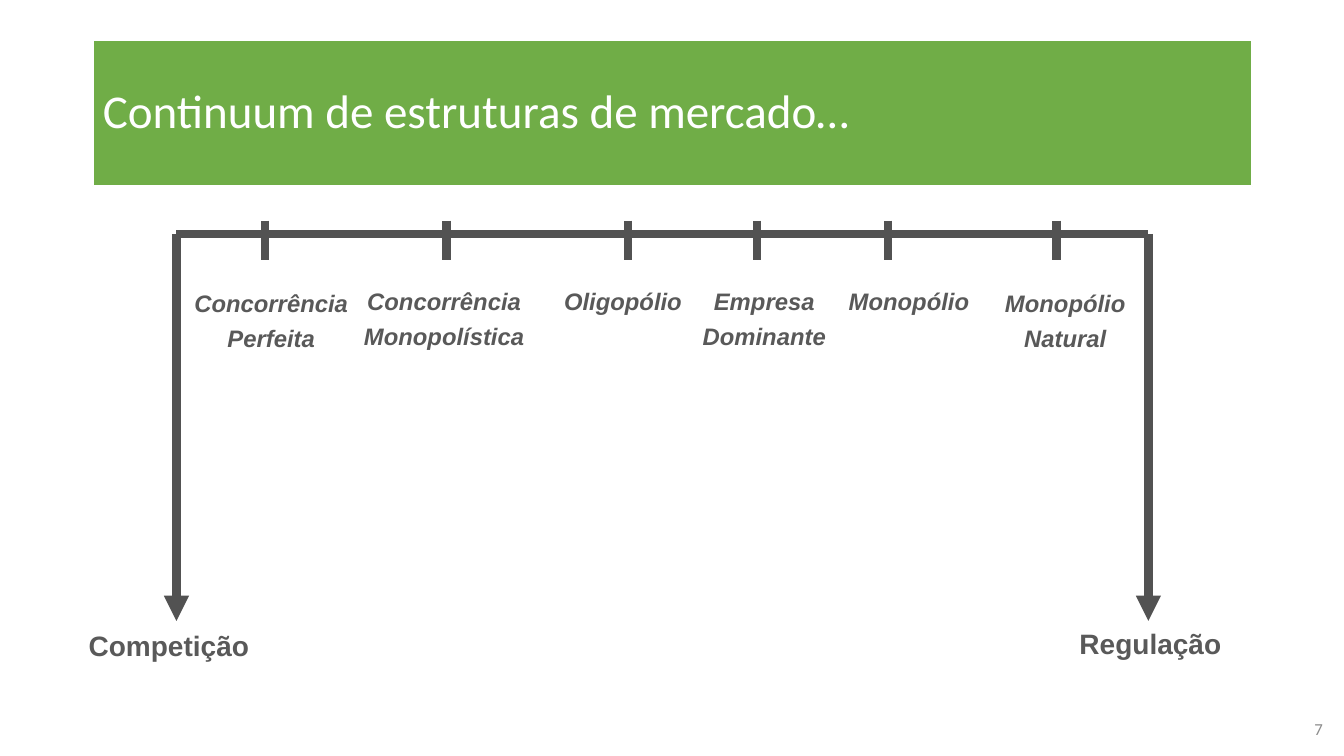
from dataclasses import dataclass

from lxml import etree
from pptx import Presentation
from pptx.dml.color import RGBColor
from pptx.enum.shapes import MSO_CONNECTOR
from pptx.enum.text import MSO_ANCHOR, MSO_AUTO_SIZE, PP_ALIGN
from pptx.oxml.ns import qn
from pptx.util import Inches, Pt

LEFT, CENTER, RIGHT = PP_ALIGN.LEFT, PP_ALIGN.CENTER, PP_ALIGN.RIGHT
TOP, MIDDLE = MSO_ANCHOR.TOP, MSO_ANCHOR.MIDDLE
NO_FIT = MSO_AUTO_SIZE.NONE
STRAIGHT = MSO_CONNECTOR.STRAIGHT


@dataclass(frozen=True)
class Theme:
    green: str = "70AD47"
    white: str = "FFFFFF"
    axis: str = "525252"
    label: str = "595959"
    number: str = "8C8C8C"
    heading_font: str = "Calibri"
    label_font: str = "Arial"
    title_size: float = 33.6
    end_size: float = 20
    label_size: float = 17
    number_size: float = 12
    axis_width: float = 6


THEME = Theme()

# Lines of the label, then tick x, label left, label width and drop,
# all measured from the left end of the axis.
STRUCTURES = [
    (["Concorrência", "Perfeita"], 0.88, 0.02, 1.84, 0.02),
    (["Concorrência", "Monopolística"], 2.68, 1.7, 1.91, 0),
    (["Oligopólio"], 4.48, 3.7, 1.46, 0),
    (["Empresa", "Dominante"], 5.76, 5.07, 1.52, 0),
    (["Monopólio"], 7.06, 6.52, 1.49, 0),
    (["Monopólio", "Natural"], 8.73, 8.07, 1.49, 0.02),
]


def write(sp, lines, *, size, color, font=THEME.label_font, bold=False,
          italic=False, align=LEFT, anchor=TOP, spacing=1.0):
    tf = sp.text_frame
    tf.word_wrap = True
    tf.auto_size = NO_FIT
    tf.vertical_anchor = anchor
    for i, line in enumerate(lines):
        p = tf.add_paragraph() if i else tf.paragraphs[0]
        p.alignment = align
        p.line_spacing = spacing
        p.space_before = Pt(size / 2 if i else 0)
        r = p.add_run()
        r.text = line
        r.font.name = font
        r.font.size = Pt(size)
        r.font.bold = bold
        r.font.italic = italic
        r.font.color.rgb = RGBColor.from_string(color)


def add_text(slide, left, top, width, height, lines, **fmt):
    sp = slide.shapes.add_textbox(
        Inches(left), Inches(top), Inches(width), Inches(height))
    write(sp, lines, **fmt)


def add_line(slide, x1, y1, x2, y2, arrow=False):
    cxn = slide.shapes.add_connector(
        STRAIGHT, Inches(x1), Inches(y1), Inches(x2), Inches(y2))
    cxn.line.width = Pt(THEME.axis_width)
    cxn.line.color.rgb = RGBColor.from_string(THEME.axis)
    if arrow:
        ln = cxn.line._get_or_add_ln()
        etree.SubElement(ln, qn("a:tailEnd"), type="triangle")
    etree.SubElement(cxn._element.spPr, qn("a:effectLst"))


def add_title(slide, left, top, width, height, text):
    sp = slide.shapes.title
    sp.left, sp.top = Inches(left), Inches(top)
    sp.width, sp.height = Inches(width), Inches(height)
    sp.fill.solid()
    sp.fill.fore_color.rgb = RGBColor.from_string(THEME.green)
    sp.line.color.rgb = RGBColor.from_string(THEME.white)
    sp.line.width = Pt(1.5)
    write(sp, [text], size=THEME.title_size, color=THEME.white,
          font=THEME.heading_font, anchor=MIDDLE, spacing=0.9)


def add_continuum(slide, left, top, width, height):
    """Draw the axis, its two end arrows and one labelled tick per structure."""
    right, bottom = left + width, top + height
    add_line(slide, left, top, right, top)
    for x in (left, right):
        add_line(slide, x, top, x, bottom, arrow=True)
    for lines, tick, label_left, label_width, drop in STRUCTURES:
        x = left + tick
        add_line(slide, x, top - 0.13, x, top + 0.26)
        add_text(slide, left + label_left, top + 0.53 + drop, label_width,
                 0.77 if len(lines) > 1 else 0.36, lines,
                 size=THEME.label_size, color=THEME.label, bold=True,
                 italic=True, align=CENTER, spacing=0.8)
    end = dict(size=THEME.end_size, color=THEME.label, bold=True)
    add_text(slide, left - 0.97, bottom + 0.03, 1.92, 0.48,
             ["Competição"], **end)
    add_text(slide, right - 1.6, bottom + 0.12, 3.24, 0.32,
             ["Regulação"], align=CENTER, spacing=0.6, **end)


def add_number(slide, left, top, width, height, number):
    add_text(slide, left, top, width, height, [number],
             size=THEME.number_size, color=THEME.number,
             font=THEME.heading_font, align=RIGHT, anchor=MIDDLE)


def main():
    prs = Presentation()
    prs.slide_width, prs.slide_height = Inches(13.33), Inches(7.5)
    title_only = prs.slide_layouts[5]
    slide = prs.slides.add_slide(title_only)
    add_title(slide, 0.92, 0.4, 11.5, 1.45,
              "Continuum de estruturas de mercado…")
    add_continuum(slide, 1.75, 2.32, 9.64, 3.84)
    add_number(slide, 12.57, 7.03, 0.65, 0.4, "7")
    prs.save("out.pptx")


if __name__ == "__main__":
    main()
